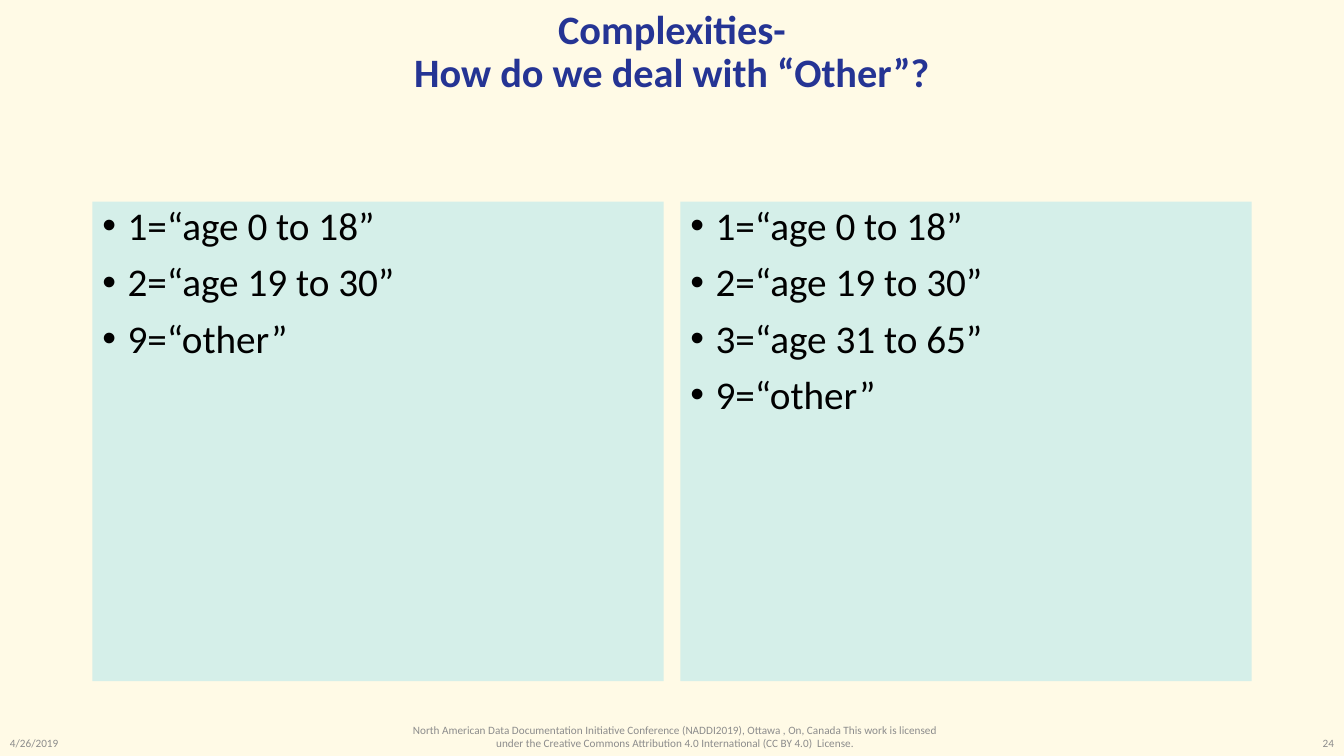
from pptx import Presentation
from pptx.dml.color import RGBColor
from pptx.enum.shapes import MSO_SHAPE as Shape
from pptx.enum.text import MSO_ANCHOR as Anchor, PP_ALIGN as Align
from pptx.oxml.ns import qn
from pptx.util import Inches, Pt
from lxml.etree import SubElement

COLUMNS, ROWS = 160, 90
GREY = "8C8C8C"


def colour(value):
    return RGBColor.from_string(value)


class SlideBuilder:
    """Draws styled elements on one slide, placed by columns and rows."""

    font = "Calibri"

    def __init__(self, deck, background):
        self.column = deck.slide_width / COLUMNS
        self.row = deck.slide_height / ROWS
        self.page = deck.slides.add_slide(deck.slide_layouts[6])
        fill = self.page.background.fill
        fill.solid()
        fill.fore_color.rgb = colour(background)

    def place(self, left, top, width, height):
        return (round(left * self.column), round(top * self.row),
                round(width * self.column), round(height * self.row))

    def span(self, para, text, size, ink, bold=False):
        span = para.add_run()
        span.text = text
        span.font.name = self.font
        span.font.size = Pt(size)
        span.font.bold = bold
        span.font.color.rgb = colour(ink)

    def text(self, area, lines, size, ink, align=Align.LEFT, bold=False, spacing=1.0):
        frame = self.page.shapes.add_textbox(*self.place(*area)).text_frame
        frame.word_wrap = True
        frame.vertical_anchor = Anchor.MIDDLE
        para = frame.paragraphs[0]
        para.alignment = align
        para.line_spacing = spacing
        for number, line in enumerate(lines):
            if number:
                para.add_line_break()
            self.span(para, line, size, ink, bold)

    def bullet_panel(self, area, items, fill, size, ink):
        box = self.page.shapes.add_shape(Shape.RECTANGLE, *self.place(*area))
        box.shadow.inherit = False
        box.fill.solid()
        box.fill.fore_color.rgb = colour(fill)
        box.line.fill.background()
        frame = box.text_frame
        frame.word_wrap = True
        frame.vertical_anchor = Anchor.TOP
        for number, item in enumerate(items):
            para = frame.add_paragraph() if number else frame.paragraphs[0]
            para.alignment = Align.LEFT
            para.line_spacing = 0.9
            para.space_before = Pt(10)
            self.bullet(para)
            self.span(para, item, size, ink)

    def bullet(self, para):
        properties = para._p.get_or_add_pPr()
        indent = Inches(0.25)
        properties.set("marL", str(indent))
        properties.set("indent", str(-indent))
        SubElement(properties, qn("a:buFont")).set("typeface", "Arial")
        SubElement(properties, qn("a:buChar")).set("char", "•")


def main():
    deck = Presentation()
    deck.slide_width, deck.slide_height = Inches(13.33), Inches(7.5)
    slide = SlideBuilder(deck, "FFFAE6")

    slide.text((11, 0.8, 138, 11), ["Complexities-", "How do we deal with “Other”?"],
               28.8, "253494", Align.CENTER, bold=True, spacing=0.9)

    first, second, third, other = (
        "1=“age 0 to 18”", "2=“age 19 to 30”", "3=“age 31 to 65”", "9=“other”")
    codings = [[first, second, other], [first, second, third, other]]
    for number, codes in enumerate(codings):
        slide.bullet_panel((11 + 70 * number, 24, 68, 57.1), codes, "D5EFE9", 28, "000000")

    footers = [
        ((0, 86.9, 36, 3.1), "4/26/2019", Align.LEFT),
        ((46.5, 85.3, 67.8, 4.7),
         "North American Data Documentation Initiative Conference (NADDI2019), "
         "Ottawa , On, Canada This work is licensed under the Creative Commons "
         "Attribution 4.0 International (CC BY 4.0)  License.", Align.CENTER),
        ((124, 86.9, 36, 3.1), "24", Align.RIGHT),
    ]
    for area, words, align in footers:
        slide.text(area, [words], 8, GREY, align)

    deck.save("out.pptx")


if __name__ == "__main__":
    main()
